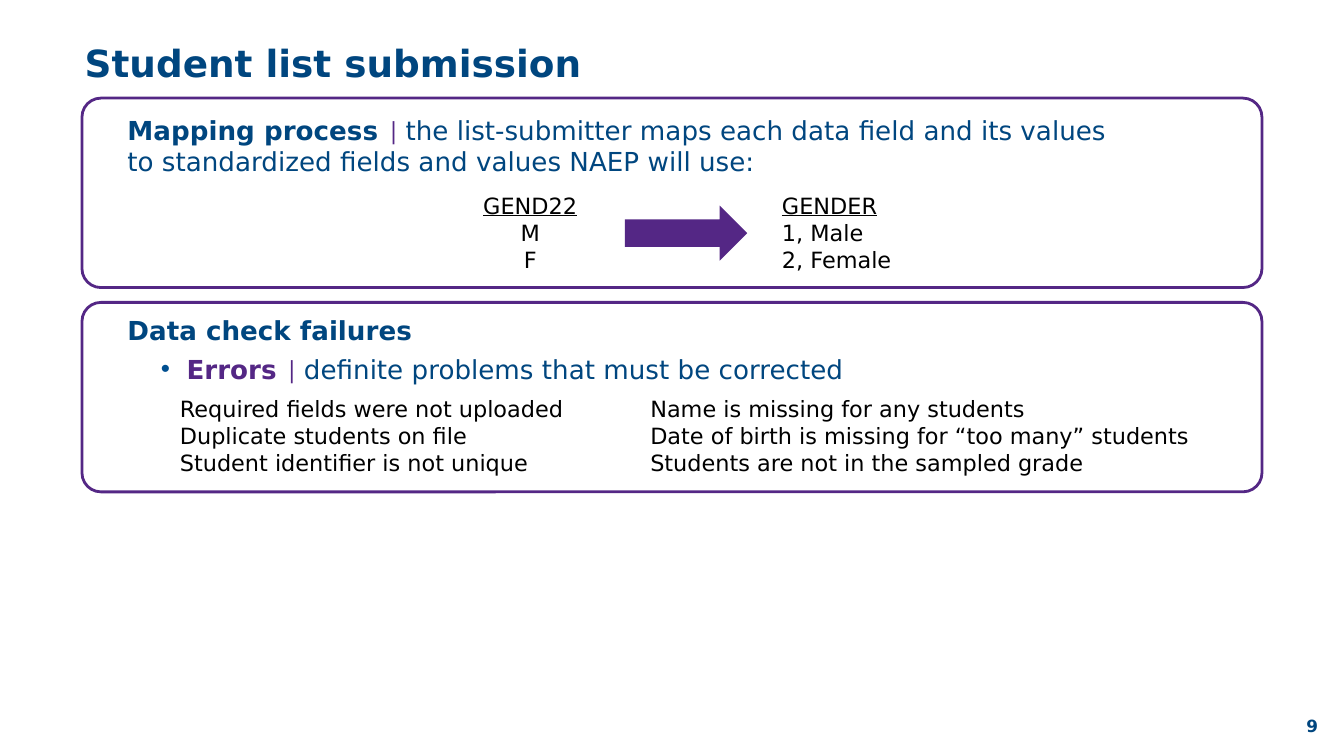
from lxml.etree import SubElement
from pptx import Presentation
from pptx.dml.color import RGBColor
from pptx.enum.shapes import MSO_SHAPE
from pptx.enum.text import MSO_ANCHOR, MSO_AUTO_SIZE, PP_ALIGN
from pptx.oxml.ns import qn
from pptx.util import Inches, Pt

COLORS = {"navy": "00467F", "purple": "542785", "bullet": "004F90", "black": "000000"}
FONT = "DejaVu Sans"
DIVIDER = ("| ", {"font": "Calibri", "color": "purple"})


def rgb(name):
    return RGBColor.from_string(COLORS[name])


def add_text(paragraph, text, size=14, font=FONT, color="navy", bold=False, underline=False):
    """Append formatted text; each newline becomes a line break."""
    for index, line in enumerate(text.split("\n")):
        if index:
            paragraph.add_line_break()
        run = paragraph.add_run()
        run.text = line
        run.font.size = Pt(size)
        run.font.name = font
        run.font.bold = bold
        run.font.underline = underline
        run.font.color.rgb = rgb(color)


def set_indent(paragraph, left, hanging=0):
    properties = paragraph._p.get_or_add_pPr()
    properties.set("marL", str(Inches(left)))
    properties.set("indent", str(Inches(-hanging)))
    return properties


def add_bullet(paragraph, left, hanging, color):
    properties = set_indent(paragraph, left, hanging)
    bullet_color = SubElement(properties, qn("a:buClr"))
    SubElement(bullet_color, qn("a:srgbClr"), val=COLORS[color])
    SubElement(properties, qn("a:buFont"), typeface="Arial")
    SubElement(properties, qn("a:buChar"), char="•")


def add_tab_stop(paragraph, position):
    tabs = SubElement(paragraph._p.get_or_add_pPr(), qn("a:tabLst"))
    SubElement(tabs, qn("a:tab"), pos=str(Inches(position)), algn="l")


def add_box(slide, left, top, width, height, wrap=True):
    frame = slide.shapes.add_textbox(
        Inches(left), Inches(top), Inches(width), Inches(height)).text_frame
    frame.word_wrap = wrap
    return frame


def add_lines(frame, lines, align=PP_ALIGN.LEFT, tab=None, underline_first=False):
    for index, line in enumerate(lines):
        paragraph = frame.add_paragraph() if index else frame.paragraphs[0]
        paragraph.alignment = align
        if tab:
            add_tab_stop(paragraph, tab)
        add_text(paragraph, line, size=12, color="black",
                 underline=underline_first and index == 0)


def add_shape(slide, kind, left, top, width, height):
    shape = slide.shapes.add_shape(
        kind, Inches(left), Inches(top), Inches(width), Inches(height))
    shape.shadow.inherit = False
    return shape


def add_panel(slide, top):
    panel = add_shape(slide, MSO_SHAPE.ROUNDED_RECTANGLE, 0.61, top, 8.78, 1.41)
    panel.adjustments[0] = 0.1
    panel.fill.background()
    panel.line.color.rgb = rgb("purple")
    panel.line.width = Pt(1.5)


def add_title(slide, text):
    title = slide.shapes.title
    title.left, title.top = Inches(0.53), Inches(0.27)
    title.width, title.height = Inches(9.17), Inches(0.43)
    frame = title.text_frame
    frame.auto_size = MSO_AUTO_SIZE.NONE
    frame.vertical_anchor = MSO_ANCHOR.MIDDLE
    heading = frame.paragraphs[0]
    heading.alignment = PP_ALIGN.LEFT
    heading.line_spacing = 0.9
    add_text(heading, text, size=20, bold=True)


def add_mapping(slide):
    add_panel(slide, 0.73)
    mapping = add_box(slide, 0.78, 0.8, 8.64, 0.52).paragraphs[0]
    set_indent(mapping, 0.07)
    add_text(mapping, "Mapping process ", bold=True)
    add_text(mapping, DIVIDER[0], **DIVIDER[1])
    add_text(mapping, "the list-submitter maps each data field and its values \n"
                      "to standardized fields and values NAEP will use:")

    # Source field, arrow, standardized field
    add_lines(add_box(slide, 3.49, 1.38, 0.91, 0.71, wrap=False),
              ["GEND22", "M", "F"], align=PP_ALIGN.CENTER, underline_first=True)
    arrow = add_shape(slide, MSO_SHAPE.RIGHT_ARROW, 4.65, 1.53, 0.91, 0.41)
    arrow.fill.solid()
    arrow.fill.fore_color.rgb = rgb("purple")
    arrow.line.fill.background()
    add_lines(add_box(slide, 5.72, 1.38, 1.03, 0.71, wrap=False),
              ["GENDER", "1, Male", "2, Female"], underline_first=True)


def add_failures(slide):
    add_panel(slide, 2.25)
    frame = add_box(slide, 0.78, 2.29, 8.64, 0.59)
    heading = frame.paragraphs[0]
    set_indent(heading, 0.07)
    add_text(heading, "Data check failures", bold=True)

    errors = frame.add_paragraph()
    errors.level = 1
    add_bullet(errors, 0.51, 0.19, "bullet")
    errors.space_before = Pt(3.8)
    add_text(errors, "Errors ", color="purple", bold=True)
    add_text(errors, DIVIDER[0], **DIVIDER[1])
    add_text(errors, "definite problems that must be corrected")

    # Two columns of examples, aligned with a tab stop
    add_lines(add_box(slide, 1.24, 2.89, 7.75, 0.71), [
        "Required fields were not uploaded\tName is missing for any students",
        "Duplicate students on file\tDate of birth is missing for “too many” students",
        "Student identifier is not unique\tStudents are not in the sampled grade",
    ], tab=3.5)


def add_page_number(slide, number):
    frame = add_box(slide, 9.72, 5.25, 0.35, 0.3)
    frame.margin_left = 0
    frame.vertical_anchor = MSO_ANCHOR.MIDDLE
    add_text(frame.paragraphs[0], number, size=9, bold=True)


def main():
    # Widescreen slide, 16:9
    presentation = Presentation()
    presentation.slide_width = Inches(10)
    presentation.slide_height = Inches(10 * 9 / 16)
    slide = presentation.slides.add_slide(presentation.slide_layouts[5])

    add_title(slide, "Student list submission")
    add_mapping(slide)
    add_failures(slide)
    add_page_number(slide, "9")
    presentation.save("out.pptx")


if __name__ == "__main__":
    main()
